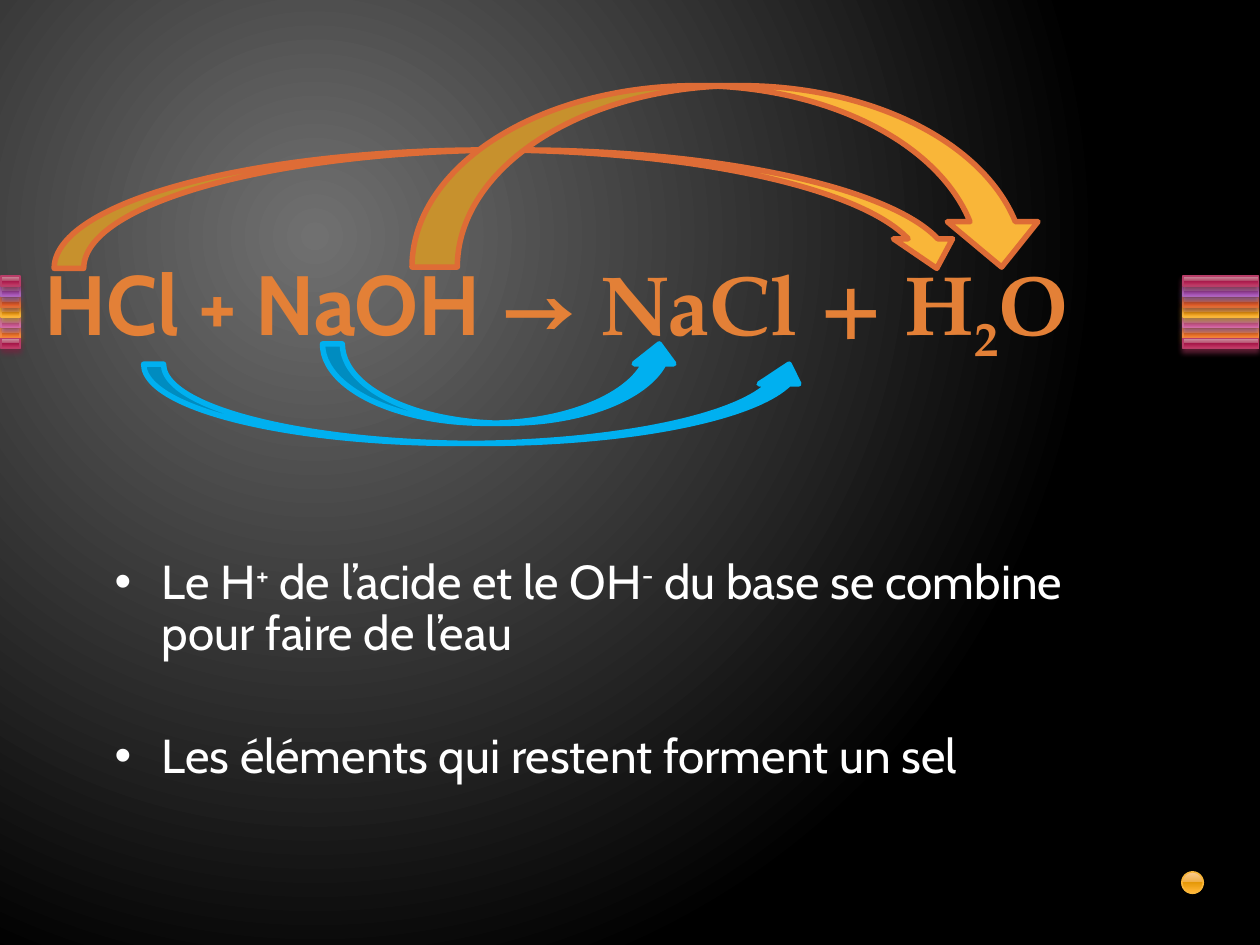
import pptx
import pptx.util
import pptx.dml.color
import pptx.enum.shapes
import pptx.enum.text
import pptx.oxml
import pptx.oxml.ns
from dataclasses import dataclass

Inches = pptx.util.Inches
Pt = pptx.util.Pt
KIND = pptx.enum.shapes.MSO_SHAPE
ALIGN = pptx.enum.text.PP_ALIGN
ANCHOR = pptx.enum.text.MSO_ANCHOR


@dataclass(frozen=True)
class Theme:
    sans: str = "Cabin"
    serif: str = "TeX Gyre Pagella"
    title: str = "E38037"
    body: str = "FFFFFF"
    amber: str = "F9B639"
    rust: str = "DE6C36"
    blue: str = "00B0F0"
    title_size: float = 48
    body_size: float = 27.2
    band_line: float = 0.9
    arrow_line: float = 3.15


LOOK = Theme()

TITLE = [
    ("HCl + NaOH ", LOOK.sans, 0),
    ("→ NaCl + H", LOOK.serif, 0),
    ("2", LOOK.serif, -25),
    ("O", LOOK.serif, 0),
]
POINTS = [
    [
        ("Le H", LOOK.sans, 0),
        ("+", LOOK.sans, 30),
        (" de l’acide et le OH", LOOK.sans, 0),
        ("-", LOOK.sans, 30),
        (" du base se combine pour faire de l’eau", LOOK.sans, 0),
    ],
    [("Les éléments qui restent forment un sel", LOOK.sans, 0)],
]
GAPS = [5.4, 40.5]

GLOSS = (0, 49, 49, 92, 100)
HUES = {
    "berry": ("CE94A2 B34869 A61749 C13764 CA5D7C", "B83D68", "722640"),
    "plum": ("C6A2D0 A666B4 8F3EA1 AD5DBF BA76CA", "AC66BB", "6A3F73"),
    "rust": ("E7A493 D66B42 CC4809 E9642C F07B55", LOOK.rust, "894321"),
    "amber": ("FBCC93 EFAE43 E59807 FFB432 FFBE5F", LOOK.amber, "9A7023"),
    "pink": ("DDA4C1 C66B9D B34181 D361A0 DC79AE", "CF6DA4", "804365"),
    "orange": ("FBB494 F08745 E5670B FF8736 FF9961", "FA8D3D", "9A5726"),
}
BANDS = ["berry", "plum", "rust", "amber", "pink", "orange", "berry"]
STACK = [5, 4, 3, 2, 1, 0, 6]
SIDES = [(0.01, 0.15), (9.39, 0.6)]
BAND_TOP, BAND_END, BAND_TALL = 2.19, 2.77, 0.08

ARROWS = [
    (KIND.CURVED_DOWN_ARROW, (0.43, 1.19, 7.24, 0.94), LOOK.amber, LOOK.rust),
    (KIND.CURVED_DOWN_ARROW, (3.27, 0.68, 5.04, 1.44), LOOK.amber, LOOK.rust),
    (KIND.CURVED_UP_ARROW, (2.56, 2.73, 2.83, 0.63), LOOK.blue, LOOK.blue),
    (KIND.CURVED_UP_ARROW, (1.14, 2.89, 5.28, 0.63), LOOK.blue, LOOK.blue),
]


def rgb(code):
    return pptx.dml.color.RGBColor.from_string(code)


def node(tag, inner):
    space = pptx.oxml.ns.nsdecls("a")
    return pptx.oxml.parse_xml(f"<a:{tag} {space}>{inner}</a:{tag}>")


def blend(fill, owner, stops, course):
    fill.gradient()
    old = owner.find(".//" + pptx.oxml.ns.qn("a:gradFill"))
    marks = "".join(
        f'<a:gs pos="{spot * 1000}"><a:srgbClr val="{code}"/></a:gs>'
        for spot, code in stops
    )
    new = node("gradFill", f"<a:gsLst>{marks}</a:gsLst>{course}")
    old.getparent().replace(old, new)


def place(item, box):
    item.left, item.top, item.width, item.height = map(Inches, box)


def shape(slide, kind, box, edge, width):
    item = slide.shapes.add_shape(kind, *map(Inches, box))
    item.shadow.inherit = False
    item.line.color.rgb = rgb(edge)
    item.line.width = Pt(width)
    return item


def glossy(slide, kind, box, hue, cast=True):
    codes, edge, shade = HUES[hue]
    item = shape(slide, kind, box, edge, LOOK.band_line)
    props = item._element.spPr
    blend(item.fill, props, zip(GLOSS, codes.split()), '<a:lin ang="5400000" scaled="0"/>')
    if cast:
        props.find(pptx.oxml.ns.qn("a:effectLst")).append(pptx.oxml.parse_xml(
            f'<a:outerShdw {pptx.oxml.ns.nsdecls("a")} blurRad="{Pt(3.1)}" '
            f'dist="{Pt(2)}" dir="5400000" rotWithShape="0">'
            f'<a:srgbClr val="{shade}"><a:alpha val="83000"/></a:srgbClr></a:outerShdw>'
        ))


def write(para, runs, size, color, bold=False, line=None, gap=0):
    para.alignment = ALIGN.LEFT
    para.line_spacing = line
    para.space_before = Pt(gap)
    for text, face, shift in runs:
        run = para.add_run()
        run.text = text
        font = run.font
        font.name, font.size, font.bold = face, Pt(size), bold
        font.color.rgb = rgb(color)
        if shift:
            font._element.set("baseline", str(shift * 1000))


def frame(item, box, anchor):
    place(item, box)
    text = item.text_frame
    text.word_wrap = True
    text.auto_size = pptx.enum.text.MSO_AUTO_SIZE.NONE
    text.vertical_anchor = anchor
    return text


def main():
    deck = pptx.Presentation()
    deck.slide_width, deck.slide_height = Inches(10), Inches(7.5)
    slide = deck.slides.add_slide(deck.slide_layouts[1])
    blend(
        slide.background.fill, slide._element, [(0, "707070"), (100, "000000")],
        '<a:path path="circle"><a:fillToRect l="50000" t="50000" '
        'r="100000" b="100000"/></a:path>',
    )

    step = (BAND_END - BAND_TOP) / len(BANDS)
    for left, width in SIDES:
        for row in STACK:
            box = (left, BAND_TOP + row * step, width, BAND_TALL)
            glossy(slide, KIND.RECTANGLE, box, BANDS[row])
    glossy(slide, KIND.OVAL, (9.38, 6.92, 0.17, 0.17), "amber", cast=False)

    title = frame(slide.shapes.title, (0.25, 1.83, 9, 1.25), ANCHOR.MIDDLE)
    write(title.paragraphs[0], TITLE, LOOK.title_size, LOOK.title, bold=True)

    body = frame(slide.placeholders[1], (0.81, 4.38, 7.75, 2.2), ANCHOR.TOP)
    for rank, (runs, gap) in enumerate(zip(POINTS, GAPS)):
        para = body.add_paragraph() if rank else body.paragraphs[0]
        write(para, runs, LOOK.body_size, LOOK.body, line=0.9, gap=gap)

    for kind, box, fill, edge in ARROWS:
        arrow = shape(slide, kind, box, edge, LOOK.arrow_line)
        arrow.fill.solid()
        arrow.fill.fore_color.rgb = rgb(fill)

    deck.save("out.pptx")


if __name__ == "__main__":
    main()
